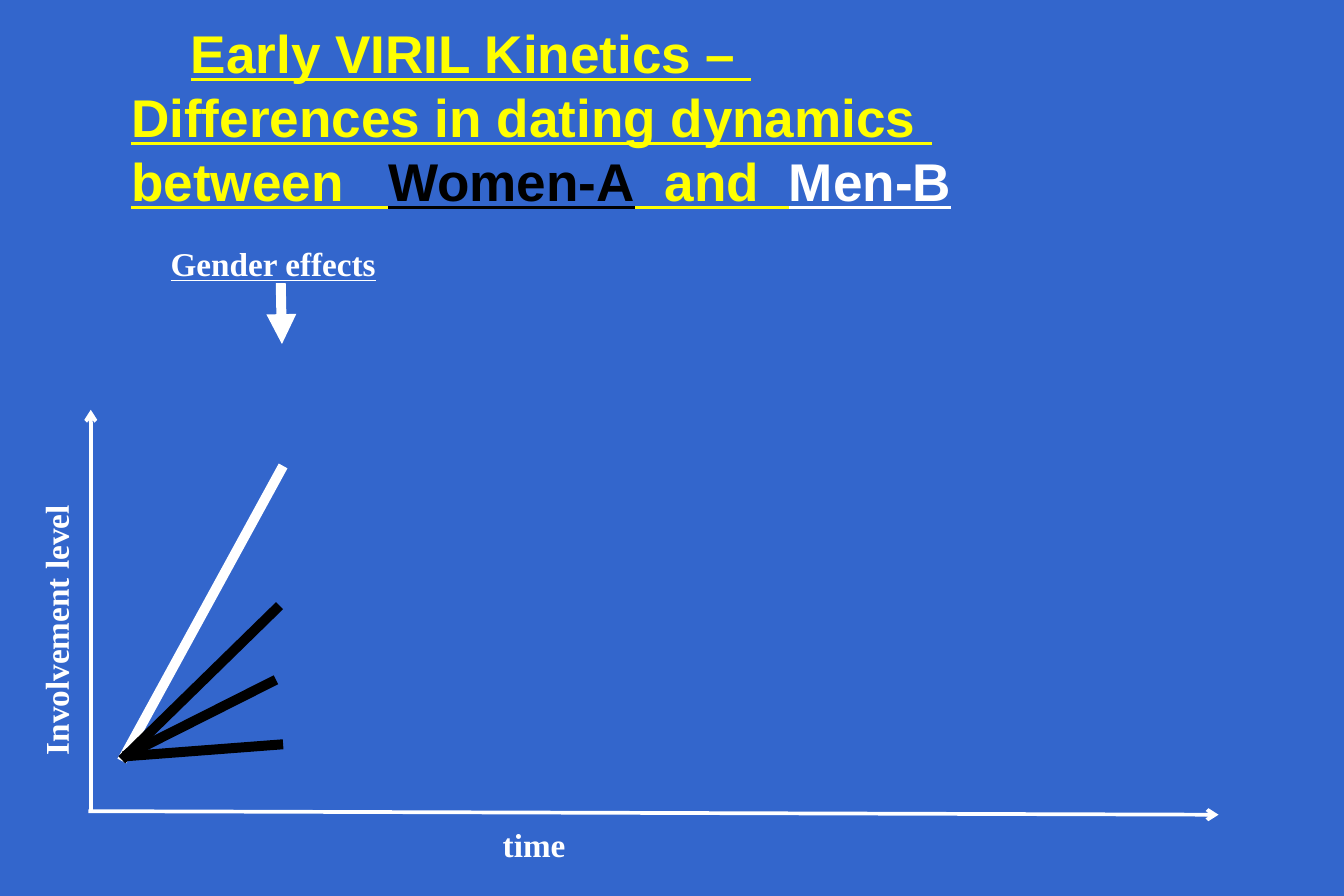
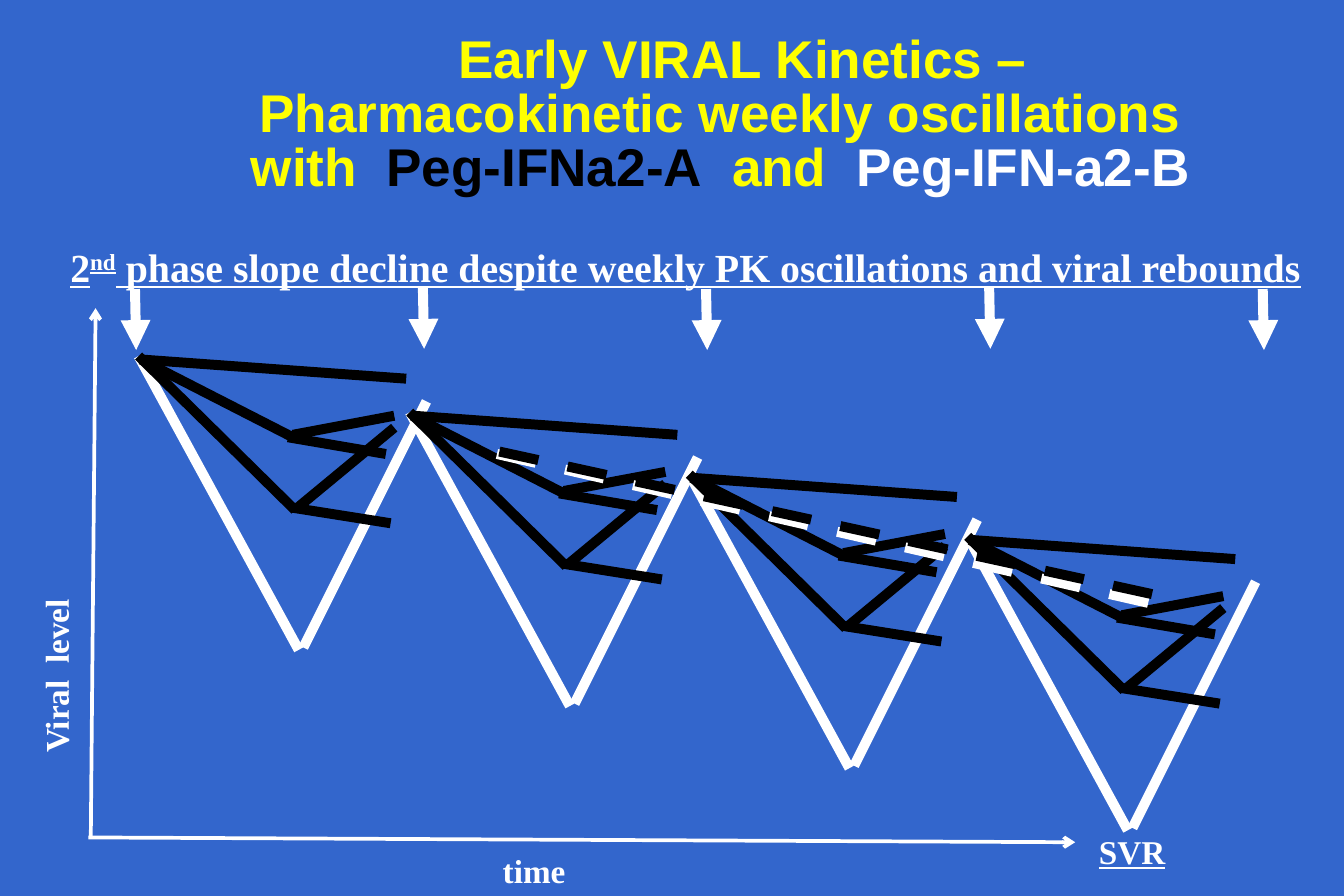
from dataclasses import dataclass
from typing import Optional

import lxml.etree
import pptx
import pptx.dml.color
import pptx.enum.dml
import pptx.enum.shapes
import pptx.enum.text
import pptx.oxml.ns
import pptx.util

Inches = pptx.util.Inches
Align = pptx.enum.text.PP_ALIGN
qn = pptx.oxml.ns.qn


@dataclass(frozen=True)
class Theme:
    background: str = "3366CC"
    heading: str = "FFFF00"
    black: str = "000000"
    white: str = "FFFFFF"
    title_font: str = "Arial"
    label_font: str = "Times New Roman"
    title_size: int = 32
    banner_size: int = 24
    label_size: int = 20
    curve_width: float = 6
    axis_width: float = 2.25


THEME = Theme()


@dataclass(frozen=True)
class Span:
    text: str
    color: str = THEME.white
    underline: bool = False
    superscript: bool = False


@dataclass(frozen=True)
class Line:
    x1: float
    y1: float
    x2: float
    y2: float
    color: str = THEME.white
    width: float = THEME.curve_width
    arrow: Optional[str] = None
    dashed: bool = False

    def moved(self, dx: float, dy: float) -> "Line":
        return Line(self.x1 + dx, self.y1 + dy, self.x2 + dx, self.y2 + dy,
                    self.color, self.width, self.arrow, self.dashed)


@dataclass(frozen=True)
class Label:
    left: float
    top: float
    spans: tuple[Span, ...]
    width: float = 2.59
    height: float = 0.43
    size: int = THEME.label_size
    rotation: int = 0


def black_line(x1: float, y1: float, x2: float, y2: float) -> Line:
    return Line(x1, y1, x2, y2, THEME.black)


def axis(x1: float, y1: float, x2: float, y2: float) -> Line:
    return Line(x1, y1, x2, y2, width=THEME.axis_width, arrow="arrow")


def marker(x: float, y: float) -> Line:
    """Short thick arrow that points down at a moment in time."""
    return Line(x, y, x + 0.01, y + 0.51, arrow="triangle")


# One week of oscillation, measured from the start of its white curve.
WEEK = (
    Line(0, 0, 1.34, 2.46),
    black_line(0.02, 0.03, 1.29, 0.68),
    black_line(0, 0, 1.31, 1.29),
    black_line(2.14, 0.6, 1.33, 1.27),
    black_line(2.14, 0.5, 1.29, 0.66),
    Line(2.41, 0.38, 1.38, 2.44),
    black_line(0.03, 0.03, 2.24, 0.19),
    black_line(2.07, 0.82, 1.25, 0.68),
    black_line(2.11, 1.4, 1.29, 1.27),
)
WEEK_STARTS = ((1.16, 2.98), (3.43, 3.45), (5.77, 3.97), (8.1, 4.49))
MARKERS = ((1.13, 2.42), (3.54, 2.41), (5.91, 2.42), (8.28, 2.41), (10.57, 2.42))


def rgb(color: str) -> pptx.dml.color.RGBColor:
    return pptx.dml.color.RGBColor.from_string(color)


def add_page(deck):
    page = deck.slides.add_slide(deck.slide_layouts[6])
    page.background.fill.solid()
    page.background.fill.fore_color.rgb = rgb(THEME.background)
    return page


def add_span(para, span: Span, font_name: str, size: int) -> None:
    """Add the text of a span, with a line break at each newline."""
    for index, piece in enumerate(span.text.split("\n")):
        if index:
            para.add_line_break()
        if not piece:
            continue
        run = para.add_run()
        run.text = piece
        run.font.name = font_name
        run.font.size = pptx.util.Pt(size)
        run.font.bold = True
        run.font.underline = span.underline
        run.font.color.rgb = rgb(span.color)
        if span.superscript:
            run._r.get_or_add_rPr().set("baseline", "30000")


def add_title(page, spans: tuple[Span, ...], align: Align, spacing: float) -> None:
    box = page.shapes.add_textbox(Inches(1), Inches(0.35), Inches(10.06), Inches(1.25))
    box.text_frame.word_wrap = True
    box.text_frame.vertical_anchor = pptx.enum.text.MSO_ANCHOR.MIDDLE
    para = box.text_frame.paragraphs[0]
    para.alignment = align
    para.line_spacing = spacing
    for span in spans:
        add_span(para, span, THEME.title_font, THEME.title_size)


def add_label(page, label: Label) -> None:
    box = page.shapes.add_textbox(Inches(label.left), Inches(label.top),
                                  Inches(label.width), Inches(label.height))
    box.rotation = label.rotation
    box.text_frame.word_wrap = True
    para = box.text_frame.paragraphs[0]
    for span in label.spans:
        add_span(para, span, THEME.label_font, label.size)


def add_line(page, line: Line) -> None:
    connector = page.shapes.add_connector(
        pptx.enum.shapes.MSO_CONNECTOR.STRAIGHT,
        Inches(line.x1), Inches(line.y1), Inches(line.x2), Inches(line.y2))
    connector.line.color.rgb = rgb(line.color)
    connector.line.width = pptx.util.Pt(line.width)
    if line.dashed:
        connector.line.dash_style = pptx.enum.dml.MSO_LINE.DASH
    properties = connector.element.spPr
    if line.arrow:
        outline = properties.find(qn("a:ln"))
        lxml.etree.SubElement(outline, qn("a:tailEnd"), type=line.arrow)
    lxml.etree.SubElement(properties, qn("a:effectLst"))


def add_drawing(page, lines: tuple[Line, ...], labels: tuple[Label, ...]) -> None:
    for line in lines:
        add_line(page, line)
    for label in labels:
        add_label(page, label)


def axis_labels(time_top: float, level_top: float, level: str) -> tuple[Label, ...]:
    return (Label(4.11, time_top, (Span("time"),)),
            Label(-0.83, level_top, (Span(level),), rotation=270))


def build_dating_page(deck) -> None:
    page = add_page(deck)
    add_title(page, (
        Span("\t", THEME.black),
        Span("Early VIRIL Kinetics – \nDifferences in dating dynamics \nbetween   ",
             THEME.heading, True),
        Span("Women-A", THEME.black, True),
        Span("  and  ", THEME.heading, True),
        Span("Men-B", THEME.white, True),
    ), Align.LEFT, 1.0)
    lines = (
        Line(1.02, 6.37, 2.37, 3.9),
        black_line(1.04, 6.33, 2.31, 5.69),
        black_line(1.02, 6.36, 2.34, 5.07),
        black_line(1.06, 6.33, 2.37, 6.23),
        marker(2.35, 2.37),
        axis(0.76, 6.8, 0.76, 3.43),
        axis(0.74, 6.79, 10.2, 6.82),
    )
    heading = Label(1.33, 1.99, (Span("Gender effects", underline=True),))
    add_drawing(page, lines, (heading, *axis_labels(6.85, 4.91, "Involvement level")))


def build_oscillation_page(deck) -> None:
    page = add_page(deck)
    add_title(page, (
        Span("\t", THEME.black),
        Span("Early VIRAL Kinetics – \nPharmacokinetic weekly oscillations\nwith  ",
             THEME.heading),
        Span("Peg-IFNa2-A", THEME.black),
        Span("  and  ", THEME.heading),
        Span("Peg-IFN-a2-B", THEME.white),
    ), Align.CENTER, 0.85)
    lines = (
        axis(0.76, 7.02, 0.8, 2.58),
        axis(0.74, 7.01, 9, 7.05),
        *(line.moved(*start) for start in WEEK_STARTS for line in WEEK),
        Line(4.16, 3.8, 9.67, 5.06, dashed=True),
        Line(4.18, 3.78, 9.72, 4.99, THEME.black, dashed=True),
        *(marker(*place) for place in MARKERS),
    )
    banner = Label(0.49, 1.98, (
        Span("2", underline=True),
        Span("nd", underline=True, superscript=True),
        Span(" phase slope decline despite weekly PK oscillations and viral rebounds",
             underline=True),
    ), width=10.76, height=0.5, size=THEME.banner_size)
    outcome = Label(9.1, 6.91, (Span("SVR", underline=True),), width=0.82)
    add_drawing(page, lines, (banner, outcome, *axis_labels(7.07, 4.89, "Viral  level")))


def main() -> None:
    deck = pptx.Presentation()
    deck.slide_width = Inches(11.25)
    deck.slide_height = Inches(7.5)
    build_dating_page(deck)
    build_oscillation_page(deck)
    deck.save("out.pptx")


if __name__ == "__main__":
    main()
